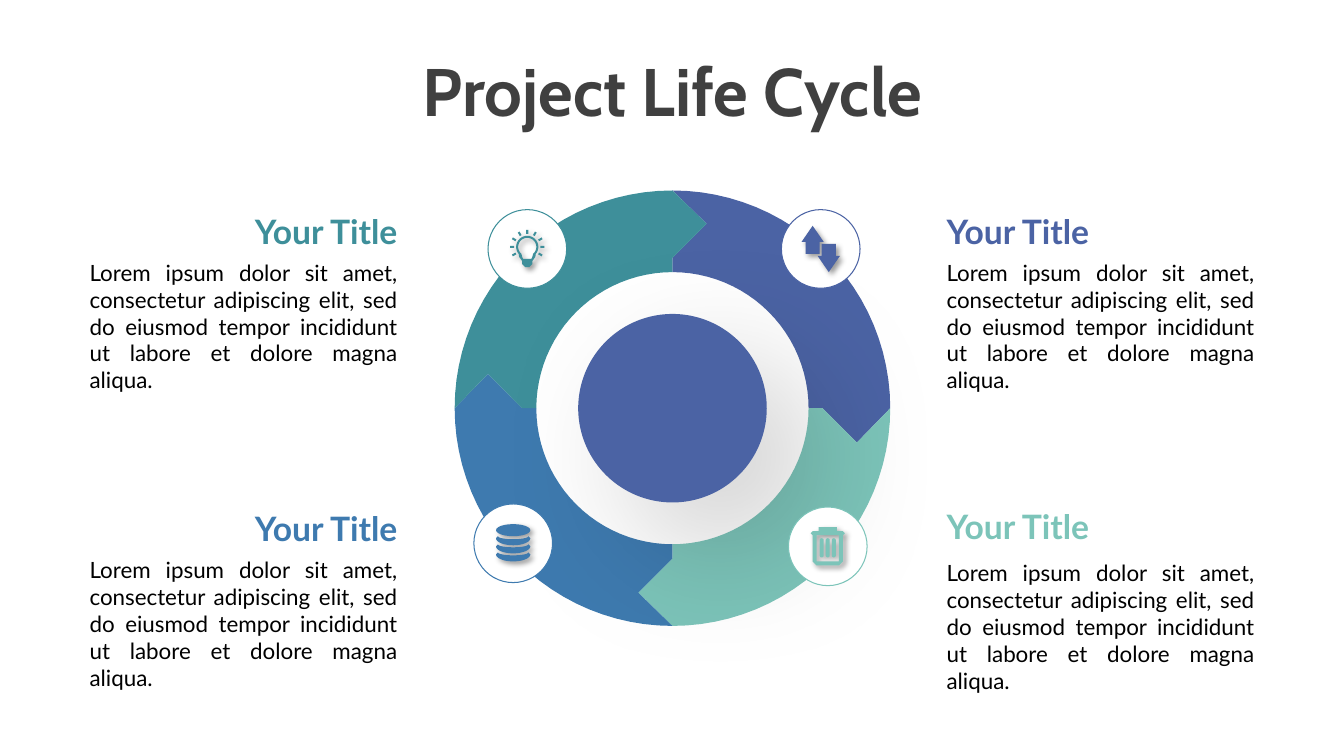
from math import cos, radians, sin

from lxml import etree
from pptx import Presentation
from pptx.dml.color import RGBColor
from pptx.enum import shapes, text
from pptx.oxml import ns
from pptx.util import Inches, Pt

NAVY = RGBColor(0x4B, 0x63, 0xA4)
BLUE = RGBColor(0x3E, 0x7A, 0xAF)
TEAL = RGBColor(0x3E, 0x8F, 0x9A)
MINT = RGBColor(0x7C, 0xC4, 0xB9)
GRAY = RGBColor(0x40, 0x40, 0x40)
BLACK = RGBColor(0, 0, 0)
WHITE = RGBColor(0xFF, 0xFF, 0xFF)
LEFT, RIGHT = text.PP_ALIGN.LEFT, text.PP_ALIGN.RIGHT
LOREM = ("Lorem ipsum dolor sit amet, consectetur adipiscing elit, sed do "
         "eiusmod tempor incididunt ut labore et dolore magna aliqua.")


def arc(x, y, wide, high, start, end, steps=24):
    turns = [radians(start + (end - start) * i / steps) for i in range(steps + 1)]
    return [(x + wide * cos(t), y + high * sin(t)) for t in turns]


def rotate(points, angle):
    c, s = cos(radians(angle)), sin(radians(angle))
    return [(x * c - y * s, x * s + y * c) for x, y in points]


def mirror(points):
    return points + [(-x, y) for x, y in reversed(points)]


def paint(shape, fill, line=None):
    shape.shadow.inherit = False
    shape.fill.solid()
    shape.fill.fore_color.rgb = fill
    if line is None:
        shape.line.fill.background()
    else:
        shape.line.color.rgb = line
        shape.line.width = Pt(0.75)


def shade(shape, alpha, blur, dist):
    effects = shape._element.spPr.find(ns.qn("a:effectLst"))
    outer = etree.SubElement(effects, ns.qn("a:outerShdw"), blurRad=str(Pt(blur)),
                             dist=str(Pt(dist)), dir="2700000", algn="tl",
                             rotWithShape="0")
    tone = etree.SubElement(outer, ns.qn("a:srgbClr"), val="000000")
    etree.SubElement(tone, ns.qn("a:alpha"), val=str(alpha * 1000))


def outline(slide, x, y, loops, fill):
    loops = [[(Inches(x + a), Inches(y + b)) for a, b in loop] for loop in loops]
    form = slide.shapes.build_freeform(*loops[0][0], scale=1.0)
    form.add_line_segments(loops[0][1:], close=True)
    for loop in loops[1:]:
        form.move_to(*loop[0])
        form.add_line_segments(loop[1:], close=True)
    shape = form.convert_to_shape()
    paint(shape, fill)
    return shape


def disc(slide, x, y, size, fill, line=None):
    shape = slide.shapes.add_shape(shapes.MSO_SHAPE.OVAL, Inches(x - size / 2),
                                   Inches(y - size / 2), Inches(size), Inches(size))
    paint(shape, fill, line)
    return shape


def write(box, words, size, color, font="Lato", bold=False, align=LEFT, grow=True):
    frame = box.text_frame
    frame.word_wrap = True
    frame.vertical_anchor = text.MSO_ANCHOR.TOP
    frame.auto_size = (text.MSO_AUTO_SIZE.SHAPE_TO_FIT_TEXT if grow
                       else text.MSO_AUTO_SIZE.NONE)
    line = frame.paragraphs[0]
    line.alignment = align
    run = line.add_run()
    run.text = words
    run.font.size, run.font.name, run.font.bold = Pt(size), font, bold
    run.font.color.rgb = color


def arrows():
    up = [(-.08, -.23), (.03, -.07), (-.01, -.07), (-.01, .05),
          (-.15, .05), (-.15, -.07), (-.19, -.07)]
    return [up, rotate(up, 180)]


def stack():
    loops = [arc(0, -.13, .17, .06, 0, 360)]
    for y in (-.05, .03, .11):
        loops.append(arc(0, y, .17, .07, 0, 180)
                     + arc(0, y - .02, .15, .03, 180, 0))
    return loops


def bin_icon():
    body = mirror([(-.09, -.19), (-.09, -.15), (-.15, -.15), (-.17, -.13),
                   (-.15, -.11), (-.15, .15), (-.11, .19)])
    hole = mirror([(-.11, -.11), (-.11, .15)])
    slots = [arc(x, -.06, .02, .02, 180, 360) + arc(x, .09, .02, .02, 0, 180)
             for x in (-.06, 0, .06)]
    return [body, hole] + slots


def bulb():
    shell = (arc(0, -.02, .11, .11, 140, 400)
             + mirror([(.08, .08), (.05, .12), (.05, .15), (.02, .18)]))
    glass = arc(0, -.02, .09, .09, 130, 410) + mirror([(.05, .08), (.04, .1)])
    ray = [(.13, -.01), (.17, -.01), (.17, .01), (.13, .01)]
    rays = [[(x, y - .02) for x, y in rotate(ray, a)] for a in range(-210, 31, 30)]
    return [shell, glass] + rays


def wheel(slide, x, y):
    part = ([(0, -1.49)] + arc(0, 0, 1.35, 1.35, -90, 0)
            + [(1.49, 0), (1.83, .34)] + arc(0, 0, 2.16, 2.16, 0, -90)
            + [(.34, -1.83)])
    for i, color in enumerate((NAVY, MINT, BLUE, TEAL)):
        outline(slide, x, y, [rotate(part, 90 * i)], color)
    shade(disc(slide, x, y, 1.87, NAVY), 18, 97, 48)


def badge(slide, x, y, loops, color):
    disc(slide, x, y, .78, WHITE, color)
    shade(outline(slide, x, y, loops, color), 40, 4, 3)


def block(slide, x, y, color, align, gap=.48, wide=3.25):
    head = slide.shapes.add_textbox(Inches(x), Inches(y), Inches(wide), Inches(.5))
    write(head, "Your Title", 24, color, bold=True, align=align)
    body = slide.shapes.add_textbox(Inches(x), Inches(y + gap), Inches(wide),
                                    Inches(1.18))
    write(body, LOREM, 16, BLACK, align=text.PP_ALIGN.JUSTIFY)


def header(slide, x, y, wide, high):
    title = slide.shapes.title
    title.left, title.top = Inches(x), Inches(y)
    title.width, title.height = Inches(wide), Inches(high)
    write(title, "Project Life Cycle", 48, GRAY, font="Cabin", bold=True,
          align=text.PP_ALIGN.CENTER, grow=False)


def main():
    deck = Presentation()
    deck.slide_width, deck.slide_height = Inches(13.33), Inches(7.5)
    slide = deck.slides.add_slide(deck.slide_layouts[5])
    header(slide, 1.4, .44, 10.54, .91)
    wheel(slide, 6.67, 4.05)
    badge(slide, 5.23, 2.47, bulb(), TEAL)
    badge(slide, 8.14, 2.47, arrows(), NAVY)
    badge(slide, 5.09, 5.39, stack(), BLUE)
    badge(slide, 8.21, 5.42, bin_icon(), MINT)
    block(slide, .79, 2.04, TEAL, RIGHT)
    block(slide, .79, 4.99, BLUE, RIGHT)
    block(slide, 9.29, 2.04, NAVY, LEFT)
    block(slide, 9.29, 4.97, MINT, LEFT, gap=.53)
    deck.save("out.pptx")


if __name__ == "__main__":
    main()
